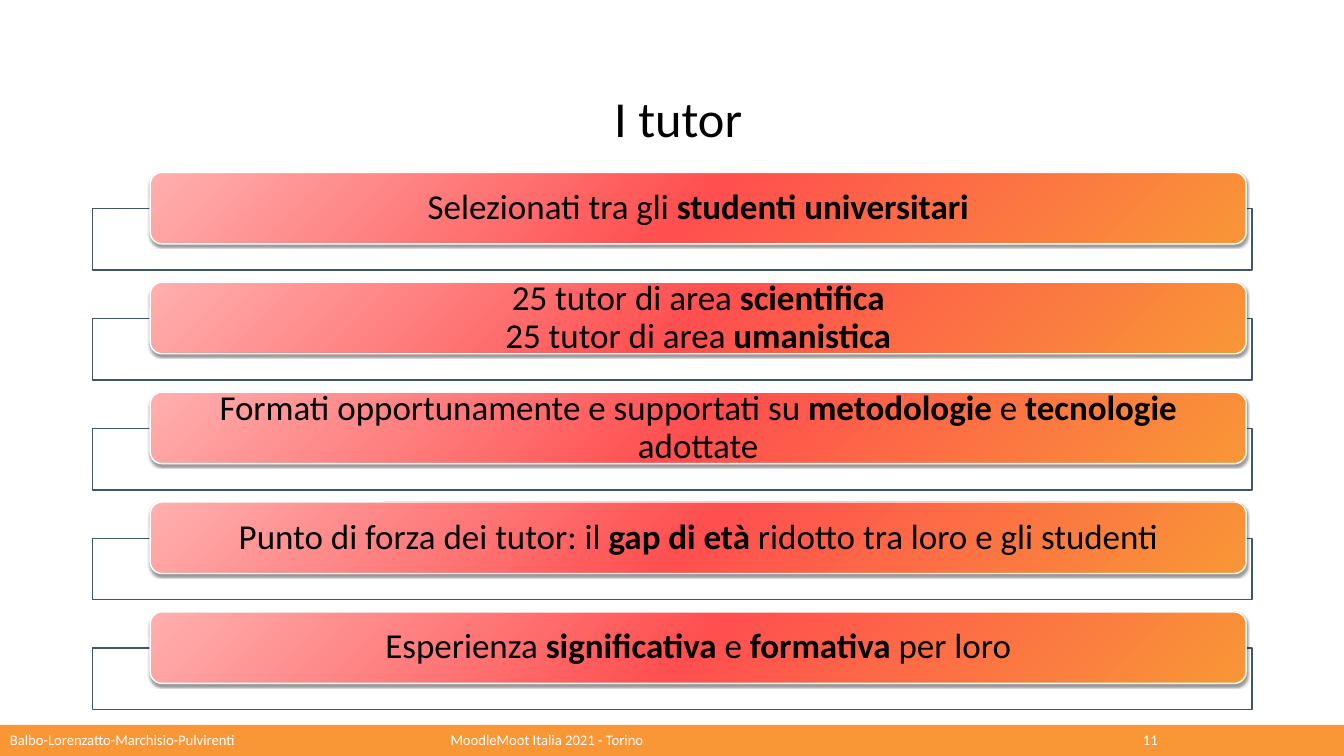
from dataclasses import dataclass

from pptx import Presentation
from pptx.dml.color import RGBColor
from pptx.enum.shapes import MSO_SHAPE
from pptx.enum.text import MSO_ANCHOR, PP_ALIGN
from pptx.oxml import parse_xml
from pptx.oxml.ns import nsdecls, qn
from pptx.util import Inches, Pt


@dataclass(frozen=True)
class Theme:
    font: str = "Calibri"
    text: str = "000000"
    white: str = "FFFFFF"
    orange: str = "F99737"
    red: str = "FF4F4F"
    pink: str = "FFAFAF"
    outline: str = "3F546D"
    title_size: float = 36
    message_size: float = 25
    footer_size: float = 10.5


class TutorSlide:
    def __init__(self, presentation, theme):
        self.theme = theme
        self.slide = presentation.slides.add_slide(presentation.slide_layouts[5])

    def style(self, paragraph, size, color, align):
        paragraph.alignment = align
        paragraph.line_spacing = 0.9
        paragraph.font.name = self.theme.font
        paragraph.font.size = Pt(size)
        paragraph.font.color.rgb = RGBColor.from_string(color)

    def box(self, kind, left, top, width, height):
        shape = self.slide.shapes.add_shape(
            kind, Inches(left), Inches(top), Inches(width), Inches(height))
        shape.shadow.inherit = False
        shape.fill.background()
        return shape

    def outline(self, shape, color):
        shape.line.color.rgb = RGBColor.from_string(color)
        shape.line.width = Pt(1)

    def title(self, text):
        heading = self.slide.shapes.title
        heading.left, heading.top = Inches(0.92), Inches(0.74)
        heading.width, heading.height = Inches(11.5), Inches(0.92)
        frame = heading.text_frame
        frame.text = text
        frame.vertical_anchor = MSO_ANCHOR.MIDDLE
        self.style(frame.paragraphs[0], self.theme.title_size,
                   self.theme.text, PP_ALIGN.CENTER)

    def frame(self, top):
        self.outline(self.box(MSO_SHAPE.RECTANGLE, 0.92, top, 11.5, 0.61),
                     self.theme.outline)

    def paint_gradient(self, shape):
        colors = (self.theme.orange, self.theme.red, self.theme.pink)
        stops = "".join(
            f'<a:gs pos="{index * 50000}"><a:srgbClr val="{color}"/></a:gs>'
            for index, color in enumerate(colors))
        properties = shape.element.spPr
        properties.replace(properties.find(qn("a:noFill")), parse_xml(
            f'<a:gradFill {nsdecls("a")} rotWithShape="1"><a:gsLst>{stops}</a:gsLst>'
            '<a:path path="circle"><a:fillToRect l="100000" t="100000"/></a:path>'
            '<a:tileRect r="-100000" b="-100000"/></a:gradFill>'))

    def cast_shadow(self, shape):
        shape.element.spPr.find(qn("a:effectLst")).append(parse_xml(
            f'<a:outerShdw {nsdecls("a")} blurRad="19050" dist="19050" dir="5400000">'
            '<a:srgbClr val="000000"><a:alpha val="40000"/></a:srgbClr></a:outerShdw>'))

    def message(self, top, lines):
        bar = self.box(MSO_SHAPE.ROUNDED_RECTANGLE, 1.49, top, 10.87, 0.71)
        self.paint_gradient(bar)
        self.outline(bar, self.theme.white)
        self.cast_shadow(bar)
        frame = bar.text_frame
        frame.word_wrap = True
        frame.vertical_anchor = MSO_ANCHOR.MIDDLE
        frame.margin_left = frame.margin_right = Inches(0.3)
        frame.margin_top = frame.margin_bottom = 0
        paragraph = frame.paragraphs[0]
        for number, line in enumerate(lines):
            if number:
                paragraph.add_line_break()
            for index, words in enumerate(line):
                run = paragraph.add_run()
                run.text = words
                if index % 2:
                    run.font.bold = True
        self.style(paragraph, self.theme.message_size,
                   self.theme.text, PP_ALIGN.CENTER)

    def footer_band(self):
        band = self.box(MSO_SHAPE.RECTANGLE, 0, 7.19, 13.33, 0.31)
        band.fill.solid()
        band.fill.fore_color.rgb = RGBColor.from_string(self.theme.orange)
        band.line.fill.background()

    def footer_text(self, left, width, text, align=PP_ALIGN.LEFT):
        label = self.slide.shapes.add_textbox(
            Inches(left), Inches(7.2), Inches(width), Inches(0.3))
        frame = label.text_frame
        frame.word_wrap = True
        frame.vertical_anchor = MSO_ANCHOR.MIDDLE
        frame.text = text
        self.style(frame.paragraphs[0], self.theme.footer_size,
                   self.theme.white, align)


MESSAGES = [
    [["Selezionati tra gli ", "studenti universitari"]],
    [["25 tutor di area ", "scientifica"], ["25 tutor di area ", "umanistica"]],
    [["Formati opportunamente e supportati su ", "metodologie", " e ",
      "tecnologie", " adottate"]],
    [["Punto di forza dei tutor: il ", "gap di età",
      " ridotto tra loro e gli studenti"]],
    [["Esperienza ", "significativa", " e ", "formativa", " per loro"]],
]
FIRST_TOP = 1.71
PITCH = 1.09


def main():
    presentation = Presentation()
    presentation.slide_width = Inches(13.33)
    presentation.slide_height = Inches(7.5)
    tutors = TutorSlide(presentation, Theme())
    tutors.footer_band()
    tutors.title(" I tutor")
    tutors.footer_text(0, 4.08, "Balbo-Lorenzatto-Marchisio-Pulvirenti")
    tutors.footer_text(4.37, 3, "MoodleMoot Italia 2021 - Torino")
    tutors.footer_text(11.16, 0.5, "11", PP_ALIGN.CENTER)
    for row, lines in enumerate(MESSAGES):
        top = FIRST_TOP + row * PITCH
        tutors.frame(top + 0.36)
        tutors.message(top, lines)
    presentation.save("out.pptx")


if __name__ == "__main__":
    main()
